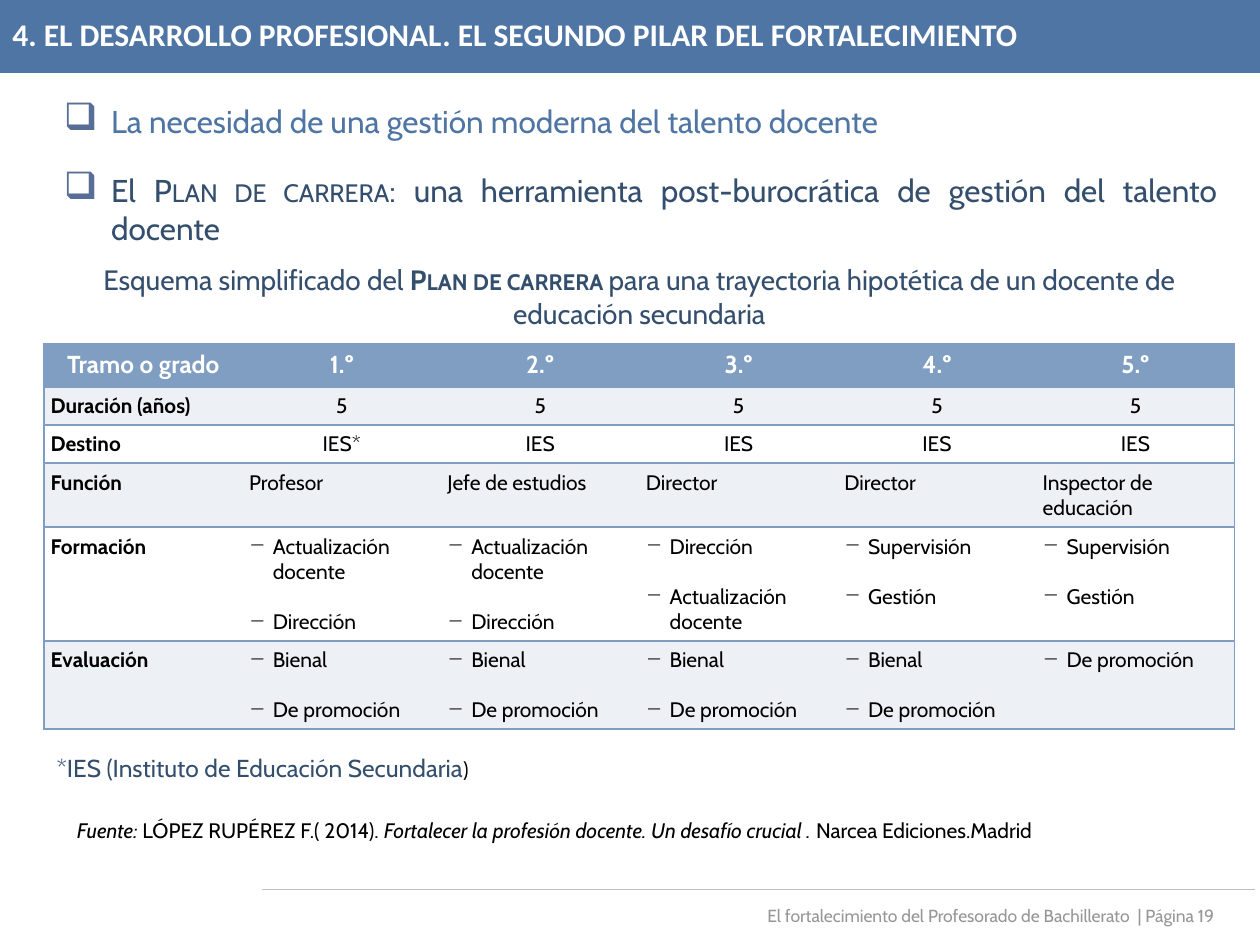
from lxml import etree
from pptx import Presentation
from pptx.dml.color import RGBColor
from pptx.enum.shapes import MSO_CONNECTOR, MSO_SHAPE
from pptx.enum.text import MSO_ANCHOR, PP_ALIGN
from pptx.oxml.ns import qn
from pptx.util import Cm, Pt

LEFT, MID, RIGHT, JUST = PP_ALIGN.LEFT, PP_ALIGN.CENTER, PP_ALIGN.RIGHT, PP_ALIGN.JUSTIFY
TOP, CENTER = MSO_ANCHOR.TOP, MSO_ANCHOR.MIDDLE
RECT, LINE = MSO_SHAPE.RECTANGLE, MSO_CONNECTOR.STRAIGHT

BLUE = RGBColor(0x4E, 0x75, 0xA3)
NAVY = RGBColor(0x34, 0x4E, 0x6D)
STEEL = RGBColor(0x80, 0x9E, 0xC2)
PALE = RGBColor(0xED, 0xF0, 0xF4)
MARK = RGBColor(0x59, 0x6E, 0x97)
GRAY = RGBColor(0x96, 0x96, 0x96)
SILVER = RGBColor(0xC0, 0xC0, 0xC0)
WHITE = RGBColor(0xFF, 0xFF, 0xFF)
BLACK = RGBColor(0, 0, 0)

TITLE = "4. EL DESARROLLO PROFESIONAL. EL SEGUNDO PILAR DEL FORTALECIMIENTO"
POINTS = [
    [("La necesidad de una gestión moderna del talento docente", {"color": BLUE})],
    [("El ", {}), ("Plan de carrera", {"small": True}),
     (": una herramienta post-burocrática de gestión del talento docente", {})],
]
CAPTION = [[
    ("Esquema simplificado del ", {}),
    ("Plan de carrera ", {"bold": True, "small": True}),
    ("para una trayectoria hipotética de un docente de educación secundaria", {}),
]]
NOTE = [[("*IES (Instituto de Educación Secundaria", {}), (")", {"size": 12, "color": BLACK})]]
SOURCE = [[
    ("Fuente:", {"italic": True}),
    (" LÓPEZ RUPÉREZ F.( 2014). ", {}),
    ("Fortalecer la profesión docente. Un desafío crucial . ", {"italic": True}),
    ("Narcea Ediciones.Madrid", {}),
]]
FOOTER = "El fortalecimiento del Profesorado de Bachillerato  | Página 19"

HEAD = ["Tramo o grado", "1.º", "2.º", "3.º", "4.º", "5.º"]
ACT, DIR, PROM = "Actualización docente", "Dirección", "De promoción"
LEAD = ["Supervisión", "Gestión"]
BOTH = ["Bienal", PROM]
ROWS = [
    HEAD,
    ["Duración (años)"] + ["5"] * 5,
    ["Destino", "IES*"] + ["IES"] * 4,
    ["Función", "Profesor", "Jefe de estudios", "Director", "Director", "Inspector de educación"],
    ["Formación", [ACT, DIR], [ACT, DIR], [DIR, ACT], LEAD, LEAD],
    ["Evaluación", BOTH, BOTH, BOTH, BOTH, [PROM]],
]
HIGH = [0.87, 0.76, 0.76, 1.29, 2.29, 1.78]


def add_mark(para, char, indent, color, scale):
    props = para._p.get_or_add_pPr()
    props.set("marL", str(Cm(indent)))
    props.set("indent", str(-Cm(indent)))
    if color is not None:
        tint = etree.SubElement(props, qn("a:buClr"))
        etree.SubElement(tint, qn("a:srgbClr"), val=str(color))
    etree.SubElement(props, qn("a:buSzPct"), val=str(scale * 1000))
    etree.SubElement(props, qn("a:buChar"), char=char)


def write(frame, paras, size=12, color=BLACK, font="Cabin", bold=False, align=LEFT,
          anchor=TOP, gap=0, lead=None, mark=None, indent=0, tint=None, scale=100):
    frame.word_wrap = True
    frame.vertical_anchor = anchor
    if isinstance(paras, str):
        paras = [paras]
    for i, runs in enumerate(paras):
        para = frame.add_paragraph() if i else frame.paragraphs[0]
        para.alignment = align
        if i:
            para.space_before = Pt(gap)
        if lead:
            para.line_spacing = lead
        if mark:
            add_mark(para, mark, indent, tint, scale)
        for text, look in [(runs, {})] if isinstance(runs, str) else runs:
            run = para.add_run()
            run.text = text
            run.font.name = font
            run.font.size = Pt(look.get("size", size))
            run.font.bold = look.get("bold", bold)
            run.font.italic = look.get("italic", False)
            run.font.color.rgb = look.get("color", color)
            if look.get("small"):
                run.font._element.set("cap", "small")


def add_text(slide, box, paras, inset=(0.25, 0.13, 0.25, 0.13), **look):
    frame = slide.shapes.add_textbox(*map(Cm, box)).text_frame
    frame.margin_left, frame.margin_top, frame.margin_right, frame.margin_bottom = map(Cm, inset)
    write(frame, paras, **look)


def add_edges(cell, first, last):
    props = cell._tc.get_or_add_tcPr()
    sides = [("L", first), ("R", last), ("T", True), ("B", True)]
    for i, (side, shown) in enumerate(sides):
        edge = etree.Element(qn("a:ln" + side), w=str(Pt(1)))
        fill = etree.SubElement(edge, qn("a:solidFill" if shown else "a:noFill"))
        if shown:
            etree.SubElement(fill, qn("a:srgbClr"), val=str(STEEL))
        props.insert(i, edge)


def add_grid(slide):
    grid = slide.shapes.add_table(
        len(ROWS), len(HEAD), Cm(0.89), Cm(6.93), Cm(24), Cm(sum(HIGH))).table
    for col in grid.columns:
        col.width = Cm(24 / len(HEAD))
    for r, row in enumerate(ROWS):
        grid.rows[r].height = Cm(HIGH[r])
        for c, text in enumerate(row):
            cell = grid.cell(r, c)
            cell.margin_left = cell.margin_right = Cm(0.13)
            cell.margin_top = cell.margin_bottom = Cm(0.13)
            cell.fill.solid()
            cell.fill.fore_color.rgb = STEEL if r == 0 else PALE if r % 2 else WHITE
            look = {"bold": c == 0, "align": MID if r < 3 and c else LEFT}
            if r == 0:
                look = {"bold": True, "align": MID, "size": 14, "color": WHITE}
            if isinstance(text, list):
                look.update(mark="−", indent=0.48, gap=14)
            write(cell.text_frame, text, **look)
            add_edges(cell, c == 0, c == len(HEAD) - 1)


def main():
    deck = Presentation()
    deck.slide_width, deck.slide_height = Cm(25.4), Cm(19.05)
    slide = deck.slides.add_slide(deck.slide_layouts[6])

    rule = slide.shapes.add_connector(LINE, Cm(5.28), Cm(17.93), Cm(25.3), Cm(17.93))
    rule.line.color.rgb = SILVER
    rule.line.width = Pt(0.75)
    etree.SubElement(rule._element.spPr, qn("a:effectLst"))

    band = slide.shapes.add_shape(RECT, 0, 0, Cm(25.4), Cm(1.47))
    band.shadow.inherit = False
    band.fill.solid()
    band.fill.fore_color.rgb = BLUE
    band.line.fill.background()
    write(band.text_frame, TITLE, size=18, color=WHITE, font="Calibri",
          bold=True, anchor=CENTER, lead=0.9)

    add_text(slide, (1.04, 1.93, 23.75, 2.57), POINTS, size=18, color=NAVY, align=JUST,
             gap=18, mark="❑", indent=0.95, tint=MARK, scale=120)
    add_grid(slide)
    low = (0.25, 0.36, 0.25, 0)
    add_text(slide, (0.89, 4.93, 24, 1.73), CAPTION, inset=low, size=16, color=NAVY,
             align=MID, anchor=CENTER)
    add_text(slide, (0.89, 14.81, 24, 0.97), NOTE, inset=low, size=14, color=NAVY, anchor=CENTER)
    add_text(slide, (1.3, 16.36, 24.1, 0.76), SOURCE)
    add_text(slide, (4.7, 18.24, 20.02, 0.43), FOOTER, inset=(0.25, 0, 0.25, 0),
             size=10, color=GRAY, align=RIGHT, anchor=CENTER)
    deck.save("out.pptx")


if __name__ == "__main__":
    main()
